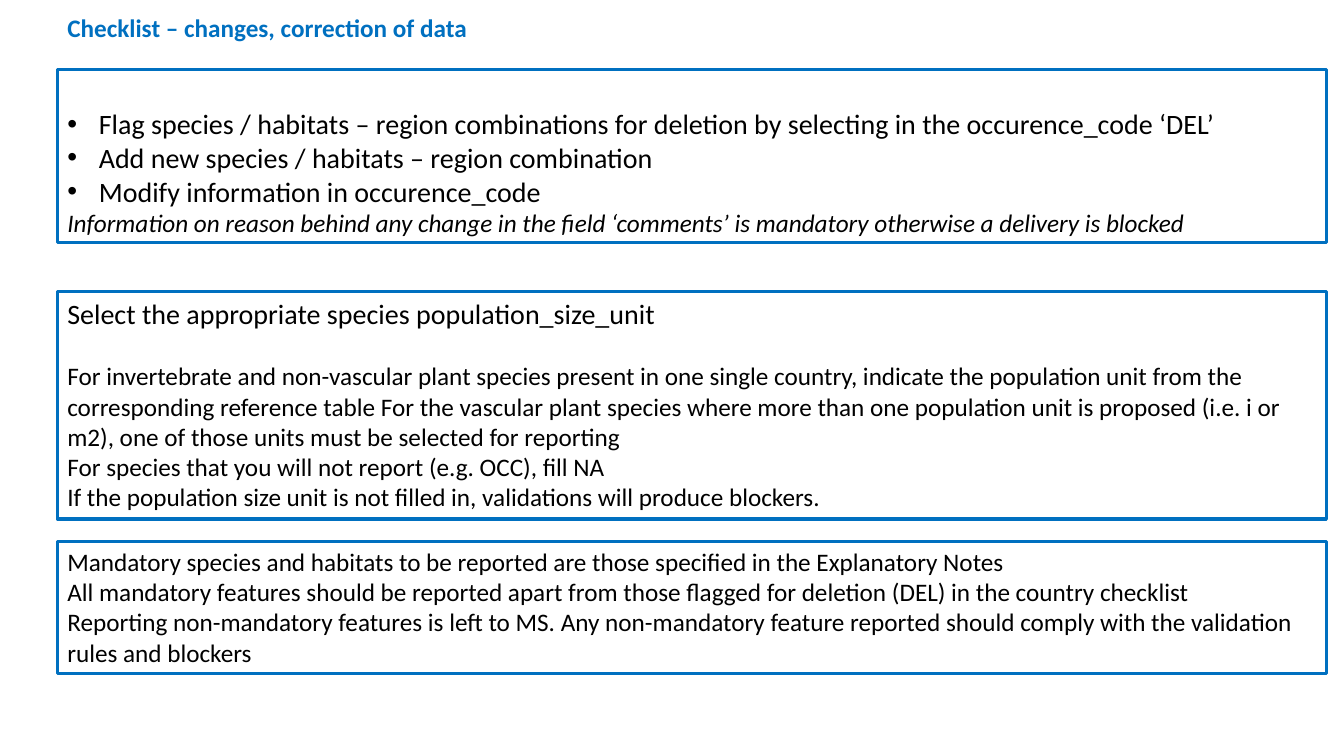
from dataclasses import dataclass

from lxml.etree import SubElement
from pptx import Presentation
from pptx.dml.color import RGBColor
from pptx.enum.shapes import MSO_SHAPE
from pptx.enum.text import MSO_ANCHOR, PP_ALIGN
from pptx.oxml.ns import qn
from pptx.slide import Slide
from pptx.text.text import TextFrame
from pptx.util import Pt


@dataclass(frozen=True)
class Theme:
    font: str = "Calibri"
    accent: RGBColor = RGBColor(0x00, 0x70, 0xC0)
    ink: RGBColor = RGBColor(0x00, 0x00, 0x00)
    body: float = 18
    lead: float = 20
    border: float = 2.25
    indent: float = 22.5
    gap: float = 22


THEME = Theme()
LEFT, PANEL_WIDTH = 41, 906.5


@dataclass(frozen=True)
class Line:
    text: str
    size: float = THEME.body
    bullet: bool = False
    italic: bool = False
    before: float = 0


@dataclass(frozen=True)
class Panel:
    top: float
    height: float
    lines: tuple[Line, ...]
    anchor: MSO_ANCHOR = MSO_ANCHOR.TOP


PANELS = (
    # Changes to the checklist
    Panel(49.7, 123.8, (
        Line("Flag species / habitats – region combinations for deletion by selecting "
             "in the occurence_code ‘DEL’", THEME.lead, bullet=True),
        Line("Add new species / habitats – region combination", THEME.lead, bullet=True),
        Line("Modify information in occurence_code", THEME.lead, bullet=True),
        Line("Information on reason behind any change in the field ‘comments’ is "
             "mandatory otherwise a delivery is blocked", italic=True),
    ), MSO_ANCHOR.BOTTOM),
    # Population units
    Panel(208.1, 162.7, (
        Line("Select the appropriate species population_size_unit", THEME.lead),
        Line("For invertebrate and non-vascular plant species present in one single "
             "country, indicate the population unit from the corresponding reference "
             "table For the vascular plant species where more than one population unit "
             "is proposed (i.e. i or m2), one of those units must be selected for "
             "reporting", before=THEME.gap),
        Line("For species that you will not report (e.g. OCC), fill NA"),
        Line("If the population size unit is not filled in, validations will produce "
             "blockers."),
    )),
    # Mandatory features
    Panel(386.6, 94.3, (
        Line("Mandatory species and habitats to be reported are those specified in the "
             "Explanatory Notes"),
        Line("All mandatory features should be reported apart from those flagged for "
             "deletion (DEL) in the country checklist"),
        Line("Reporting non-mandatory features is left to MS. Any non-mandatory feature "
             "reported should comply with the validation rules and blockers"),
    )),
)


def write(frame: TextFrame, text: str, *, first: bool = False, size: float = THEME.body,
          color: RGBColor = THEME.ink, bold: bool = False, italic: bool = False,
          bullet: bool = False, before: float = 0) -> None:
    paragraph = frame.paragraphs[0] if first else frame.add_paragraph()
    paragraph.alignment = PP_ALIGN.LEFT
    if before:
        paragraph.space_before = Pt(before)
    if bullet:
        properties = paragraph._p.get_or_add_pPr()
        properties.set("marL", str(Pt(THEME.indent)))
        properties.set("indent", str(-Pt(THEME.indent)))
        SubElement(properties, qn("a:buFont"), typeface="Arial")
        SubElement(properties, qn("a:buChar"), char="•")
    run = paragraph.add_run()
    run.text = text
    run.font.name = THEME.font
    run.font.size = Pt(size)
    run.font.bold = bold
    run.font.italic = italic
    run.font.color.rgb = color


def draw_panel(slide: Slide, panel: Panel) -> None:
    box = slide.shapes.add_shape(MSO_SHAPE.RECTANGLE, Pt(LEFT), Pt(panel.top),
                                 Pt(PANEL_WIDTH), Pt(panel.height))
    box.shadow.inherit = False
    box.fill.background()
    box.line.color.rgb = THEME.accent
    box.line.width = Pt(THEME.border)
    frame = box.text_frame
    frame.word_wrap = True
    frame.vertical_anchor = panel.anchor
    for index, line in enumerate(panel.lines):
        write(frame, line.text, first=index == 0, size=line.size, bullet=line.bullet,
              italic=line.italic, before=line.before)


def draw_heading(slide: Slide, text: str) -> None:
    heading = slide.shapes.add_textbox(Pt(LEFT), Pt(5), Pt(480), Pt(29))
    heading.text_frame.word_wrap = True
    write(heading.text_frame, text, first=True, color=THEME.accent, bold=True)


def main() -> None:
    deck = Presentation()
    deck.slide_width, deck.slide_height = Pt(960), Pt(540)
    slide = deck.slides.add_slide(deck.slide_layouts[6])
    for panel in PANELS:
        draw_panel(slide, panel)
    draw_heading(slide, "Checklist – changes, correction of data")
    deck.save("out.pptx")


if __name__ == "__main__":
    main()
